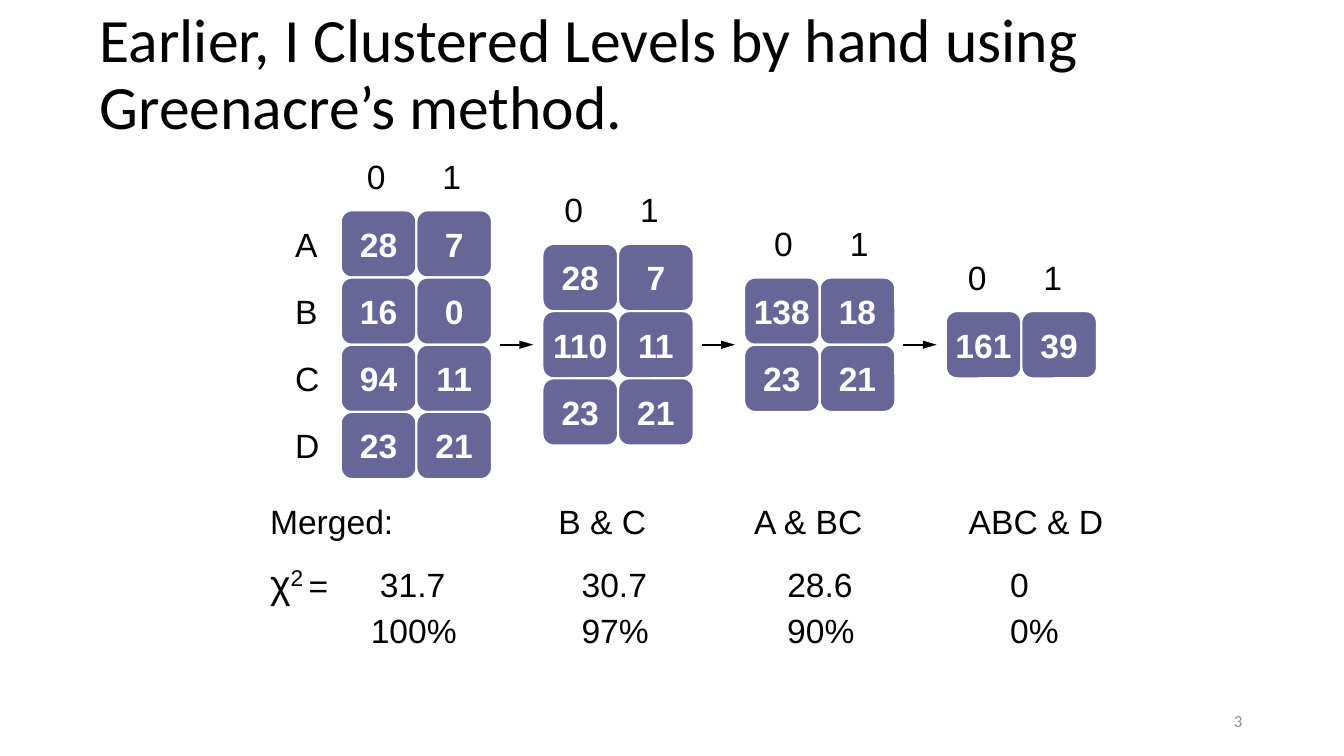
from lxml.etree import SubElement
from pptx import Presentation
from pptx.dml.color import RGBColor
from pptx.enum.shapes import MSO_CONNECTOR, MSO_SHAPE
from pptx.enum.text import MSO_ANCHOR, MSO_AUTO_SIZE, PP_ALIGN
from pptx.oxml.ns import qn
from pptx.util import Inches, Pt

BLACK, WHITE, PURPLE, GREY = "000000", "FFFFFF", "666699", "8C8C8C"
CELL_WIDTH, CELL_HEIGHT = 0.75, 2 / 3
FIRST_LEFT, STAGE_STEP, MIDDLE = 3.38, 2, 3.42
LABEL_HEIGHT = 0.5

STAGES = [
    ([(28, 7), (16, 0), (94, 11), (23, 21)], 3.54),
    ([(28, 7), (110, 11), (23, 21)], 5.5),
    ([(138, 18), (23, 21)], 7.58),
    ([(161, 39)], 9.5),
]
SUMMARY_ROWS = [
    (4.92, [("Merged:", 2.58, 1.43), ("B & C", 5.44, 1.09),
            ("A & BC", 7.38, 1.29), ("ABC & D", 9.51, 1.56)]),
    (5.55, [("31.7", 3.67, 0.85), ("30.7", 5.67, 0.85),
            ("28.6", 7.71, 0.85), ("0", 9.92, 0.39)]),
    (6, [("100%", 3.58, 1.06), ("97%", 5.67, 0.87),
         ("90%", 7.71, 0.87), ("0%", 9.92, 0.68)]),
]


def color(value):
    """Turn a hex string into a colour."""
    return RGBColor.from_string(value)


def format_run(run, size=24, fill=BLACK, font="Arial", bold=False):
    """Set the font of one run."""
    run.font.name = font
    run.font.size = Pt(size)
    run.font.bold = bold
    run.font.color.rgb = color(fill)


def add_title(slide, text):
    """Place and format the title placeholder."""
    title = slide.shapes.title
    title.left, title.top = Inches(0.89), Inches(0.03)
    title.width, title.height = Inches(11.5), Inches(1.45)
    frame = title.text_frame
    frame.text = text
    frame.auto_size = MSO_AUTO_SIZE.NONE
    frame.vertical_anchor = MSO_ANCHOR.MIDDLE
    paragraph = frame.paragraphs[0]
    paragraph.alignment = PP_ALIGN.LEFT
    paragraph.line_spacing = 0.9
    format_run(paragraph.runs[0], 44, font="Calibri")


def add_label(slide, text, left, top, width, height=LABEL_HEIGHT):
    """Add a one-line text box and return its paragraph."""
    box = slide.shapes.add_textbox(Inches(left), Inches(top), Inches(width), Inches(height))
    frame = box.text_frame
    frame.word_wrap = False
    frame.auto_size = MSO_AUTO_SIZE.SHAPE_TO_FIT_TEXT
    paragraph = frame.paragraphs[0]
    paragraph.text = text
    for run in paragraph.runs:
        format_run(run)
    return paragraph


def add_cell(slide, value, left, top):
    """Add one rounded count cell."""
    cell = slide.shapes.add_shape(
        MSO_SHAPE.ROUNDED_RECTANGLE,
        Inches(left), Inches(top), Inches(CELL_WIDTH), Inches(CELL_HEIGHT))
    cell.shadow.inherit = False
    cell.fill.solid()
    cell.fill.fore_color.rgb = color(PURPLE)
    cell.line.color.rgb = color(WHITE)
    cell.line.width = Pt(1.5)
    frame = cell.text_frame
    frame.text = str(value)
    frame.word_wrap = False
    frame.vertical_anchor = MSO_ANCHOR.MIDDLE
    paragraph = frame.paragraphs[0]
    paragraph.alignment = PP_ALIGN.CENTER
    format_run(paragraph.runs[0], fill=WHITE, bold=True)


def add_arrow(slide, start, end):
    """Add a horizontal arrow between two stages."""
    arrow = slide.shapes.add_connector(
        MSO_CONNECTOR.STRAIGHT, Inches(start), Inches(MIDDLE), Inches(end), Inches(MIDDLE))
    arrow.line.color.rgb = color(BLACK)
    arrow.line.width = Pt(1.5)
    properties = arrow._element.spPr
    SubElement(properties.find(qn("a:ln")), qn("a:tailEnd"), type="triangle", w="med", len="lg")
    SubElement(properties, qn("a:effectLst"))


def add_stage(slide, index, rows, header_left):
    """Add one table of counts, its column headers and its incoming arrow."""
    left = FIRST_LEFT + index * STAGE_STEP
    top = MIDDLE - len(rows) * CELL_HEIGHT / 2
    if index:
        add_arrow(slide, left - 0.42, left - 0.09)
    for row, counts in enumerate(rows):
        for column, count in enumerate(counts):
            add_cell(slide, count, left + column * CELL_WIDTH, top + row * CELL_HEIGHT)
    for column, header in enumerate("01"):
        add_label(slide, header, header_left + column * CELL_WIDTH, top - 0.59, 0.39)


def add_chi_square(slide):
    """Add the chi-square label with its superscript."""
    paragraph = add_label(slide, "χ", 2.58, 5.5, 0.82, 0.57)
    paragraph.runs[0].font.size = Pt(28)
    for text, size, baseline in [("2", 28, 30000), (" ", 24, 30000), ("=", 24, 0)]:
        run = paragraph.add_run()
        run.text = text
        format_run(run, size)
        run._r.get_or_add_rPr().set("baseline", str(baseline))


def add_slide_number(slide, number):
    """Add the slide number at the lower right."""
    box = slide.shapes.add_textbox(Inches(9.42), Inches(6.95), Inches(3), Inches(0.4))
    frame = box.text_frame
    frame.word_wrap = True
    frame.vertical_anchor = MSO_ANCHOR.MIDDLE
    paragraph = frame.paragraphs[0]
    paragraph.text = number
    paragraph.alignment = PP_ALIGN.RIGHT
    format_run(paragraph.runs[0], 12, GREY, "Calibri")


def main():
    """Build the slide and save it."""
    presentation = Presentation()
    presentation.slide_width, presentation.slide_height = Inches(13.33), Inches(7.5)
    slide = presentation.slides.add_slide(presentation.slide_layouts[5])
    add_title(slide, "Earlier, I Clustered Levels by hand using Greenacre’s method.")
    for row, level in enumerate("ABCD"):
        add_label(slide, level, 2.83, 2.17 + row * CELL_HEIGHT, 0.43)
    for index, (rows, header_left) in enumerate(STAGES):
        add_stage(slide, index, rows, header_left)
    add_chi_square(slide)
    for top, labels in SUMMARY_ROWS:
        for text, left, width in labels:
            add_label(slide, text, left, top, width)
    add_slide_number(slide, "3")
    presentation.save("out.pptx")


if __name__ == "__main__":
    main()
